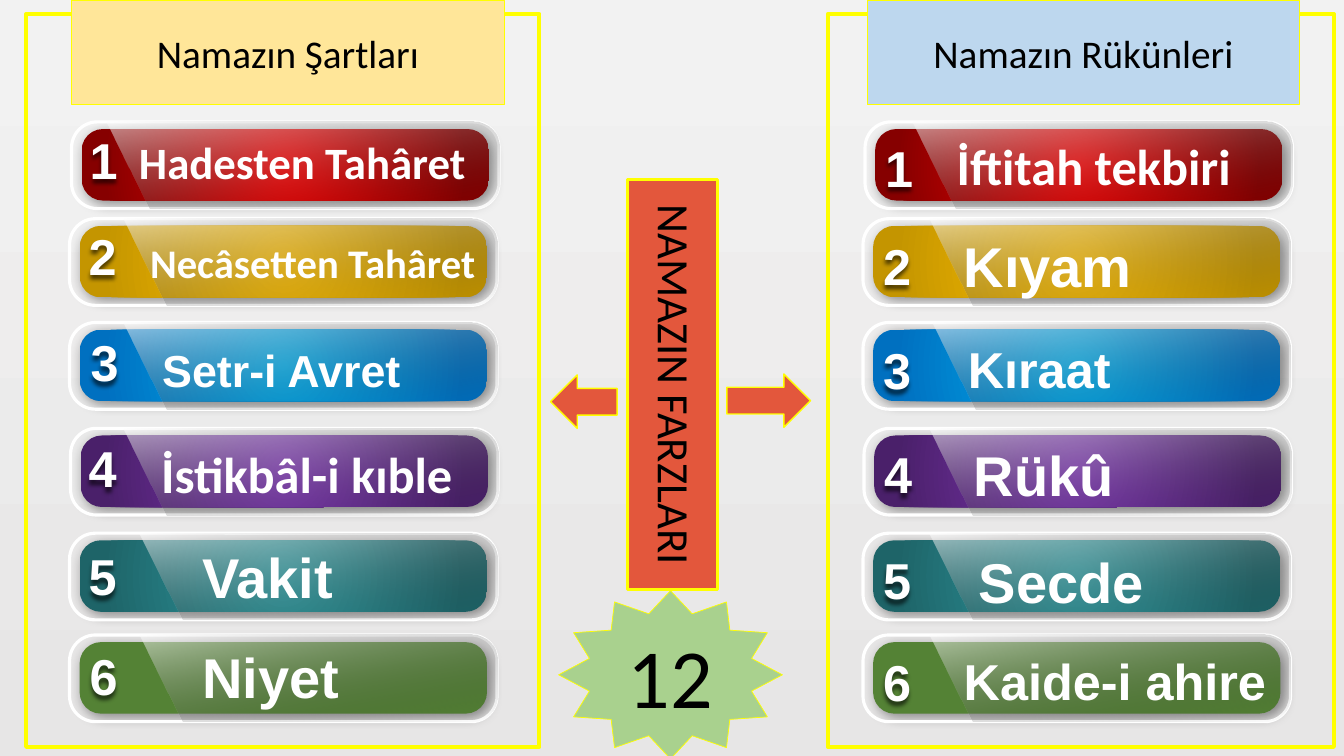
from math import cos, pi, sin

from lxml import etree
from pptx import Presentation
from pptx import util as u
from pptx.dml.color import RGBColor
from pptx.enum import shapes, text
from pptx.oxml.ns import qn

# Content
TITLE = "NAMAZIN FARZLARI"
TOTAL = "12"
# Row: ring top, ring shift to the right, centre colour, edge colour
ROWS = [
    (1.21, 0.02, "FF0000", "860000"),
    (2.17, 0, "FFC000", "C49500"),
    (3.20, 0, "00B0F0", "0070C0"),
    (4.25, 0.01, "8037B7", "4A206A"),
    (5.29, 0, "2F9DA3", "1E6468"),
    (6.30, 0, "548235", None),
]
# Item: label, font, size, label left, top, width, number left, top, gloss left
COLUMNS = [
    {
        "heading": "Namazın Şartları", "heading_left": 0.71, "heading_fill": "FFE699",
        "frame": (0.26, 0.14, 5.09, 7.27), "ring_left": 0.69,
        "items": [
            ("Hadesten Tahâret", "Calibri", 32, 1.28, 1.29, 3.61, 0.79, 1.23, 1.06),
            ("Necâsetten Tahâret", "Calibri", 29, 1.39, 2.31, 3.83, 0.78, 2.18, 1.22),
            ("Setr-i Avret", "Arial", 32, 1.51, 3.35, 2.99, 0.80, 3.24, 1.22),
            ("İstikbâl-i kıble", "Calibri", 36, 1.50, 4.35, 3.29, 0.78, 4.29, 1.22),
            ("Vakit", "Arial", 40, 1.91, 5.33, 2.58, 0.78, 5.36, 1.38),
            ("Niyet", "Arial", 40, 1.91, 6.32, 2.58, 0.79, 6.35, 1.38),
        ],
    },
    {
        "heading": "Namazın Rükünleri", "heading_left": 8.6, "heading_fill": "BDD7EE",
        "frame": (8.21, 0.14, 5.02, 7.27), "ring_left": 8.56,
        "items": [
            ("İftitah tekbiri", "Calibri", 36, 9.39, 1.29, 3.08, 8.68, 1.31, 9.05),
            ("Kıyam", "Arial", 40, 9.46, 2.25, 2.58, 8.66, 2.28, 9.22),
            ("Kıraat", "Arial", 36, 9.50, 3.31, 2.58, 8.66, 3.32, 9.25),
            ("Rükû", "Arial", 40, 9.56, 4.32, 2.58, 8.67, 4.35, 9.22),
            ("Secde", "Arial", 40, 9.61, 5.38, 2.58, 8.66, 5.40, 9.22),
            ("Kaide-i ahire", "Arial", 36, 9.46, 6.40, 3.26, 8.66, 6.41, 9.22),
        ],
    },
]
ARROWS = [((7.21, 3.71, 0.83, 0.53), 0), ((5.46, 3.72, 0.66, 0.53), 180)]

RING_WIDTH, RING_HEIGHT = 4.24, 0.86
BAR_WIDTH, BAR_HEIGHT = 4.04, 0.71
BAR_INSET_X, BAR_INSET_Y = 0.1, 0.07
CORNER = 0.298
GLOSS_SLANT = 0.43
YELLOW, WHITE, BLACK, ORANGE = "FFFF00", "FFFFFF", "000000", "E3573C"
KIND = shapes.MSO_SHAPE


def color(value):
    return RGBColor.from_string(value)


def inches(*values):
    return [u.Inches(value) for value in values]


def paint(shape, fill=None, line=None, width=1):
    shape.shadow.inherit = False
    if fill:
        shape.fill.solid()
        shape.fill.fore_color.rgb = color(fill)
    else:
        shape.fill.background()
    if line:
        shape.line.color.rgb = color(line)
        shape.line.width = u.Pt(width)
    else:
        shape.line.fill.background()


def add_shape(parent, kind, box, fill=None, line=None, width=1):
    shape = parent.add_shape(kind, *inches(*box))
    paint(shape, fill, line, width)
    return shape


def paint_gradient(fill, first, last, end=1.0, angle=270):
    fill.gradient()
    fill.gradient_angle = angle
    for stop, value, position in zip(fill.gradient_stops, (first, last), (0, end)):
        stop.color.rgb = color(value)
        stop.position = position


def add_alpha(color_element, percent):
    etree.SubElement(color_element, qn("a:alpha"), val=str(percent * 1000))


def add_shadow(shape, opacity, blur, distance, angle):
    shape.shadow.inherit = False
    effects = shape.element.spPr.find(qn("a:effectLst"))
    shadow = etree.SubElement(
        effects, qn("a:outerShdw"), blurRad=str(u.Pt(blur)), dist=str(u.Pt(distance)),
        dir=str(angle * 60000), algn="tl", rotWithShape="0")
    add_alpha(etree.SubElement(shadow, qn("a:srgbClr"), val=BLACK), opacity)


def set_text(shape, words, font, size, ink, bold=False, centred=True):
    frame = shape.text_frame
    frame.text = words
    frame.word_wrap = True
    paragraph = frame.paragraphs[0]
    if centred:
        frame.vertical_anchor = text.MSO_ANCHOR.MIDDLE
        paragraph.alignment = text.PP_ALIGN.CENTER
    run_font = paragraph.runs[0].font
    run_font.name, run_font.size, run_font.bold = font, u.Pt(size), bold
    run_font.color.rgb = color(ink)


def add_label(parent, words, font, size, left, top, width):
    label = parent.add_textbox(*inches(left, top, width, size / 60 + 0.1))
    set_text(label, words, font, size, WHITE, bold=True, centred=False)
    return label


def add_gloss(parent, left, right, top):
    # Slanted left edge, rounded corners on the right
    bottom = top + RING_HEIGHT
    radius = CORNER * RING_HEIGHT
    angles = [step * pi / 16 for step in range(9)]
    points = [(right - radius + radius * sin(a), top + radius - radius * cos(a))
              for a in angles]
    points += [(right - radius + radius * cos(a), bottom - radius + radius * sin(a))
               for a in angles]
    points.append((left + GLOSS_SLANT, bottom))
    builder = parent.build_freeform(*inches(left, top), scale=1.0)
    builder.add_line_segments([inches(*point) for point in points], close=True)
    gloss = builder.convert_to_shape()
    paint(gloss)
    paint_gradient(gloss.fill, WHITE, BLACK, angle=280)
    for element, percent in zip(gloss.element.spPr.iter(qn("a:srgbClr")), (56, 0)):
        add_alpha(element, percent)


def add_button(slide, number, row, ring_left, item):
    top, shift, centre, edge = row
    label, font, size, left, label_top, width, number_left, number_top, gloss_left = item
    ring_left += shift
    parent = slide.shapes.add_group_shape().shapes

    # Coloured bar
    bar = add_shape(parent, KIND.ROUNDED_RECTANGLE,
                    (ring_left + BAR_INSET_X, top + BAR_INSET_Y, BAR_WIDTH, BAR_HEIGHT), centre)
    if edge:
        paint_gradient(bar.fill, centre, edge, end=0.88)
        gradient = bar.element.spPr.find(qn("a:gradFill"))
        gradient.remove(gradient.find(qn("a:lin")))
        radial = etree.SubElement(gradient, qn("a:path"), path="circle")
        etree.SubElement(radial, qn("a:fillToRect"), l="50000", t="50000", r="50000", b="50000")
    add_shadow(bar, 40, 9, 3, 45)

    # White ring and gloss
    ring = add_shape(parent, KIND.ROUNDED_RECTANGLE,
                     (ring_left, top, RING_WIDTH, RING_HEIGHT), line=WHITE, width=2.25)
    bar.adjustments[0] = ring.adjustments[0] = CORNER
    add_gloss(parent, gloss_left, ring_left + RING_WIDTH, top)

    # Number and label
    digit = add_label(parent, str(number), "Arial", 36, number_left, number_top, 0.79)
    add_shadow(digit, 60, 3, 3, 90)
    add_label(parent, label, font, size, left, label_top, width)


def main():
    presentation = Presentation()
    presentation.slide_width, presentation.slide_height = inches(13.33, 7.5)
    slide = presentation.slides.add_slide(presentation.slide_layouts[5])
    paint_gradient(slide.background.fill, "F2F2F2", "E7E6E6")

    # Upright title
    title = slide.shapes.title
    title.left, title.top, title.width, title.height = inches(4.64, 3.37, 4.06, 0.89)
    title.rotation = 90
    paint(title, ORANGE, YELLOW, 2.25)
    set_text(title, TITLE, "Calibri", 32, BLACK)
    title.text_frame.paragraphs[0].line_spacing = 0.9

    # Two columns of buttons
    for column in COLUMNS:
        add_shape(slide.shapes, KIND.RECTANGLE, column["frame"], line=YELLOW, width=3)
        for number, (row, item) in enumerate(zip(ROWS, column["items"]), 1):
            add_button(slide, number, row, column["ring_left"], item)
        heading = add_shape(slide.shapes, KIND.RECTANGLE,
                            (column["heading_left"], 0, 4.29, 1.04),
                            column["heading_fill"], YELLOW, 0.5)
        set_text(heading, column["heading"], "Calibri", 28, BLACK)

    # Arrows and total
    for box, rotation in ARROWS:
        arrow = add_shape(slide.shapes, KIND.RIGHT_ARROW, box, ORANGE, YELLOW)
        arrow.rotation = rotation
    star = add_shape(slide.shapes, KIND.STAR_12_POINT, (5.54, 5.86, 2.22, 1.67),
                     "A9D18E", YELLOW, 0.5)
    set_text(star, TOTAL, "Calibri", 60, BLACK)

    presentation.save("out.pptx")


if __name__ == "__main__":
    main()
